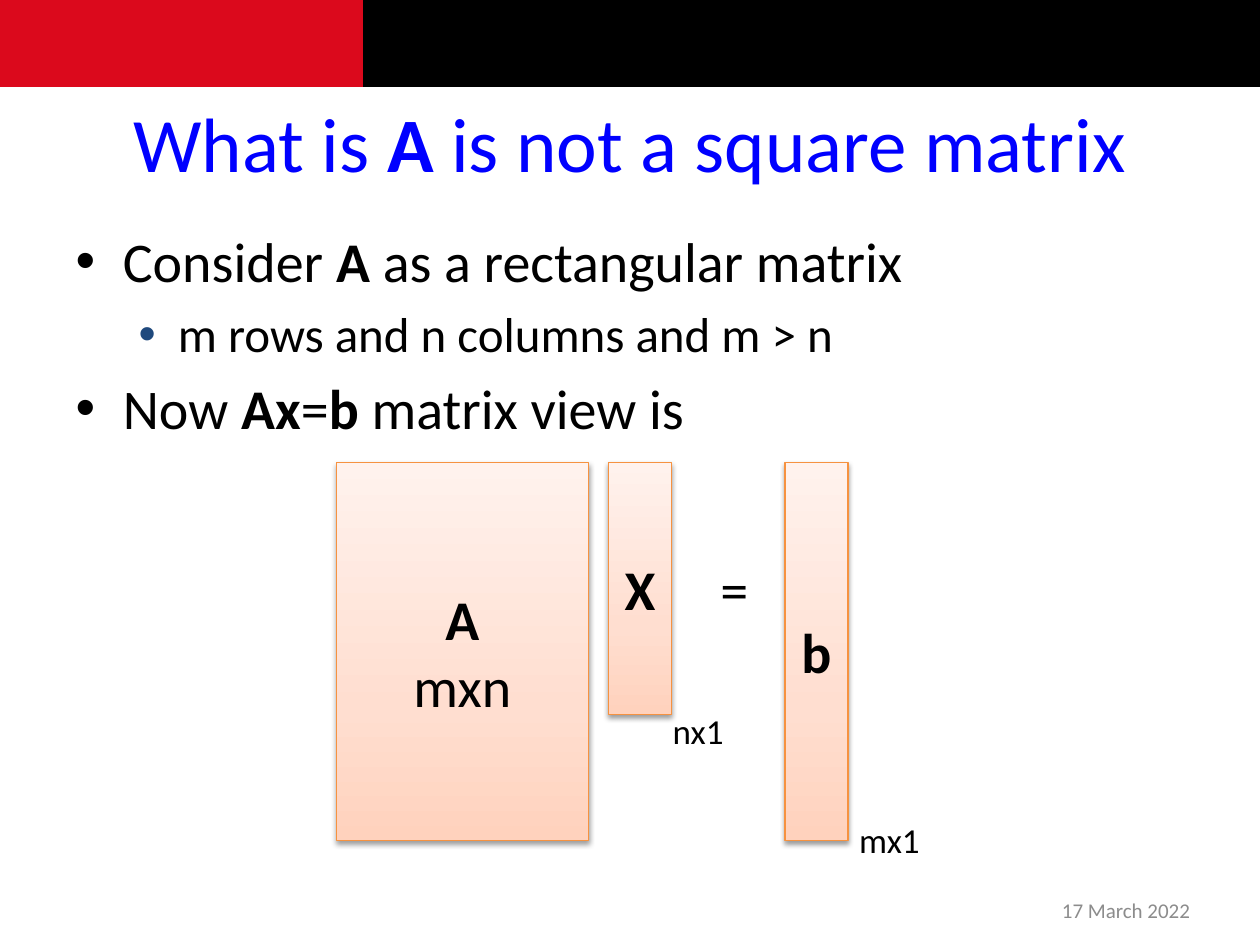
from dataclasses import dataclass

from lxml.etree import SubElement
from pptx import Presentation
from pptx.dml.color import RGBColor
from pptx.enum.shapes import MSO_SHAPE
from pptx.enum.text import MSO_ANCHOR, MSO_AUTO_SIZE, PP_ALIGN
from pptx.oxml import parse_xml
from pptx.oxml.ns import nsdecls, qn
from pptx.shapes.autoshape import Shape
from pptx.slide import Slide
from pptx.text.text import _Paragraph as Paragraph
from pptx.util import Inches, Pt


@dataclass(frozen=True)
class Theme:
    font: str = "Calibri"
    black: str = "000000"
    red: str = "DB091C"
    title: str = "0000FF"
    date: str = "8C8C8C"
    sub_bullet: str = "1F497D"
    matrix_line: str = "F69240"
    matrix_stops: tuple = ((0, "FFD2BD"), (35, "FFDED0"), (100, "FFF2ED"))
    title_size: int = 44
    body_size: int = 32
    sub_size: int = 28
    dimension_size: int = 20
    date_size: int = 12


@dataclass(frozen=True)
class Box:
    left: float
    top: float
    width: float
    height: float

    def lengths(self) -> tuple:
        return tuple(map(Inches, (self.left, self.top, self.width, self.height)))


@dataclass(frozen=True)
class Matrix:
    left: float
    width: float
    height: float
    lines: tuple


@dataclass(frozen=True)
class Label:
    text: str
    box: Box
    size: int


THEME = Theme()
MATRIX_TOP = 3.67
BANNER_HEIGHT = 0.69
RED_WIDTH = 2.88

BANNERS = (
    (Box(RED_WIDTH, 0, 10 - RED_WIDTH, BANNER_HEIGHT), THEME.black),
    (Box(0, 0, RED_WIDTH, BANNER_HEIGHT), THEME.red),
)
BULLETS = (
    (0, "Consider *A* as a rectangular matrix"),
    (1, "m rows and n columns and m > n"),
    (0, "Now* Ax*=*b *matrix view is"),
)
MATRICES = (
    Matrix(2.67, 2, 3, ("*A*", "mxn")),
    Matrix(4.83, 0.5, 2, ("*X*",)),
    Matrix(6.23, 0.5, 3, ("*b*",)),
)
LABELS = (
    Label("=", Box(5.62, 4.35, 0.43, 0.64), THEME.body_size),
    Label("nx1", Box(5.24, 5.58, 0.61, 0.44), THEME.dimension_size),
    Label("mx1", Box(6.72, 6.45, 0.69, 0.44), THEME.dimension_size),
)


def write(paragraph: Paragraph, text: str, size: int, color: str = THEME.black) -> None:
    """Add runs to the paragraph; text between asterisks is bold."""
    for index, part in enumerate(text.split("*")):
        if not part:
            continue
        run = paragraph.add_run()
        run.text = part
        formats = {"name": THEME.font, "size": Pt(size), "bold": index % 2 == 1}
        for name, value in formats.items():
            setattr(run.font, name, value)
        run.font.color.rgb = RGBColor.from_string(color)


def place(shape: Shape, box: Box) -> None:
    for name, value in zip(("left", "top", "width", "height"), box.lengths()):
        setattr(shape, name, value)


def add_banner(slide: Slide, box: Box, color: str) -> None:
    shape = slide.shapes.add_shape(MSO_SHAPE.RECTANGLE, *box.lengths())
    shape.shadow.inherit = False
    shape.fill.solid()
    shape.fill.fore_color.rgb = RGBColor.from_string(color)
    shape.line.fill.background()


def add_matrix(slide: Slide, matrix: Matrix) -> None:
    box = Box(matrix.left, MATRIX_TOP, matrix.width, matrix.height)
    shape = slide.shapes.add_shape(MSO_SHAPE.RECTANGLE, *box.lengths())
    shape.line.color.rgb = RGBColor.from_string(THEME.matrix_line)
    shape.line.width = Pt(0.75)
    add_gradient_and_shadow(shape)
    frame = shape.text_frame
    frame.vertical_anchor = MSO_ANCHOR.MIDDLE
    for index, line in enumerate(matrix.lines):
        paragraph = frame.add_paragraph() if index else frame.paragraphs[0]
        paragraph.alignment = PP_ALIGN.CENTER
        write(paragraph, line, THEME.body_size)


def add_gradient_and_shadow(shape: Shape) -> None:
    stops = "".join(
        f'<a:gs pos="{position * 1000}"><a:srgbClr val="{color}"/></a:gs>'
        for position, color in THEME.matrix_stops
    )
    gradient = parse_xml(
        f'<a:gradFill {nsdecls("a")} rotWithShape="1"><a:gsLst>{stops}</a:gsLst>'
        '<a:lin ang="16200000" scaled="0"/></a:gradFill>'
    )
    shadow = parse_xml(
        f'<a:effectLst {nsdecls("a")}><a:outerShdw blurRad="{Pt(3.1)}" dist="{Pt(1.6)}"'
        f' dir="5400000" rotWithShape="0"><a:srgbClr val="{THEME.black}">'
        '<a:alpha val="38000"/></a:srgbClr></a:outerShdw></a:effectLst>'
    )
    properties = shape.element.spPr
    properties.find(qn("a:prstGeom")).addnext(gradient)
    properties.find(qn("a:ln")).addnext(shadow)


def add_label(slide: Slide, label: Label) -> None:
    frame = slide.shapes.add_textbox(*label.box.lengths()).text_frame
    frame.word_wrap = False
    frame.auto_size = MSO_AUTO_SIZE.SHAPE_TO_FIT_TEXT
    write(frame.paragraphs[0], label.text, label.size)


def add_date(slide: Slide) -> None:
    frame = slide.shapes.add_textbox(*Box(8.33, 7.02, 1.5, 0.4).lengths()).text_frame
    frame.word_wrap = True
    frame.vertical_anchor = MSO_ANCHOR.MIDDLE
    write(frame.paragraphs[0], "17 March 2022", THEME.date_size, THEME.date)


def fill_title(slide: Slide) -> None:
    title = slide.shapes.title
    place(title, Box(0, 0.5, 10, 1.25))
    title.text_frame.vertical_anchor = MSO_ANCHOR.MIDDLE
    paragraph = title.text_frame.paragraphs[0]
    paragraph.alignment = PP_ALIGN.CENTER
    write(paragraph, "What is *A* is not a square matrix", THEME.title_size, THEME.title)


def fill_body(slide: Slide) -> None:
    body = slide.placeholders[1]
    place(body, Box(0.5, 1.75, 9, 4.95))
    frame = body.text_frame
    for index, (level, text) in enumerate(BULLETS):
        paragraph = frame.add_paragraph() if index else frame.paragraphs[0]
        paragraph.level = level
        if index == 0:
            paragraph.space_before = Pt(0)
        if level:
            properties = paragraph._p.get_or_add_pPr()
            color = SubElement(properties, qn("a:buClr"))
            SubElement(color, qn("a:srgbClr"), val=THEME.sub_bullet)
            SubElement(properties, qn("a:buChar"), char="•")
        write(paragraph, text, THEME.sub_size if level else THEME.body_size)


def main() -> None:
    presentation = Presentation()
    presentation.slide_width = Inches(10)
    presentation.slide_height = Inches(7.5)
    slide = presentation.slides.add_slide(presentation.slide_layouts[1])
    for box, color in BANNERS:
        add_banner(slide, box, color)
    fill_title(slide)
    fill_body(slide)
    add_date(slide)
    for matrix in MATRICES:
        add_matrix(slide, matrix)
    for label in LABELS:
        add_label(slide, label)
    presentation.save("out.pptx")


if __name__ == "__main__":
    main()
